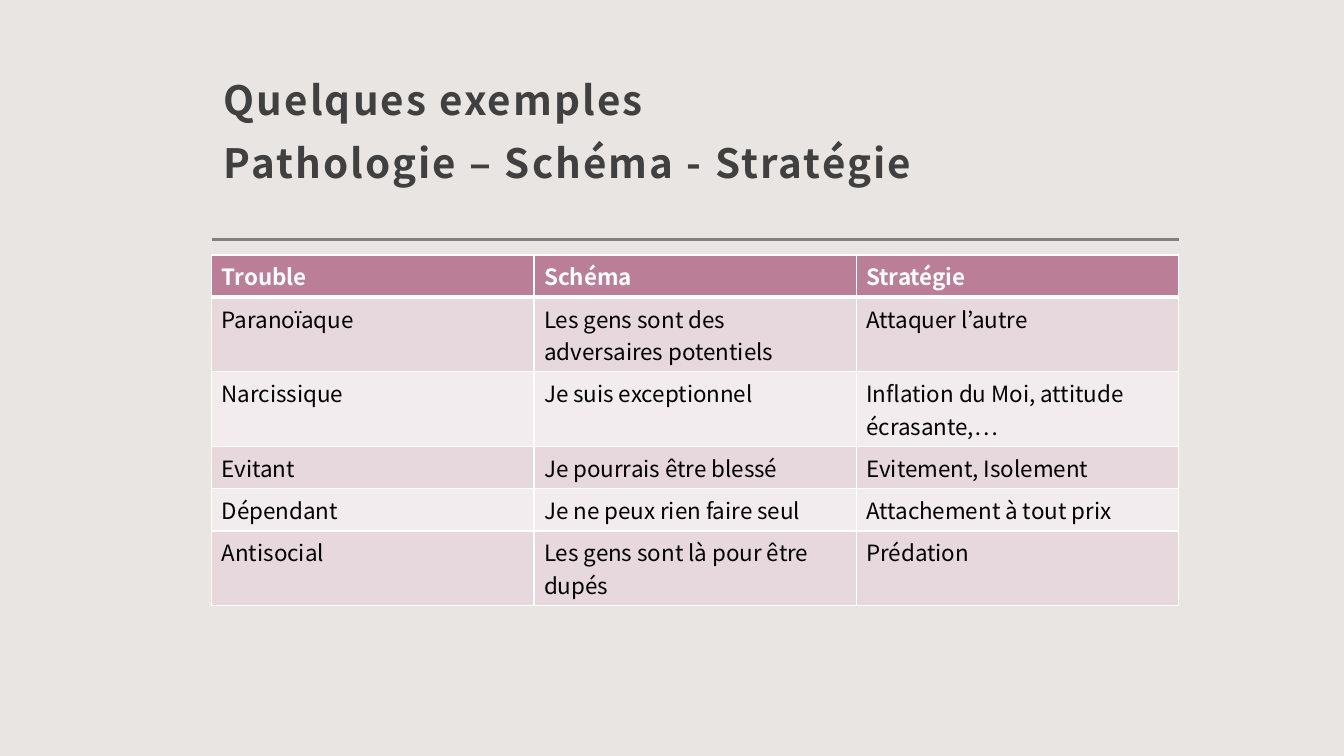
import pptx
import pptx.dml.color
import pptx.enum.shapes
import pptx.enum.text
import pptx.oxml
import pptx.oxml.ns
import pptx.util

WIDTH, HEIGHT = 13.33, 7.5
FONT = "Noto Sans CJK JP"
HEADER_FILL, BAND_FILLS = "BA7F96", ("E7D8DD", "F3ECEF")
ONE_LINE, TWO_LINES, LINE_CHARACTERS = 0.42, 0.74, 30
TITLE = "Quelques exemples\vPathologie – Schéma - Stratégie"
TROUBLES = [
    ("Trouble", "Schéma", "Stratégie"),
    ("Paranoïaque", "Les gens sont des adversaires potentiels", "Attaquer l’autre"),
    ("Narcissique", "Je suis exceptionnel", "Inflation du Moi, attitude écrasante,…"),
    ("Evitant", "Je pourrais être blessé", "Evitement, Isolement"),
    ("Dépendant", "Je ne peux rien faire seul", "Attachement à tout prix"),
    ("Antisocial", "Les gens sont là pour être dupés", "Prédation"),
]


def inches(*lengths):
    """Convert lengths in inches to slide units."""
    return [pptx.util.Inches(length) for length in lengths]


def colour(hex_value):
    """Return the colour for a hex string."""
    return pptx.dml.color.RGBColor.from_string(hex_value)


def paint(fill, hex_value):
    """Give a fill one solid colour."""
    fill.solid()
    fill.fore_color.rgb = colour(hex_value)


def write(frame, text, size, hex_value, bold):
    """Write text in a frame and format its runs."""
    frame.text = text
    formats = {"name": FONT, "size": pptx.util.Pt(size), "bold": bold}
    for run in frame.paragraphs[0].runs:
        for key, value in formats.items():
            setattr(run.font, key, value)
        run.font.color.rgb = colour(hex_value)


def add_title(slide, box):
    """Place the two-line title at the bottom of its box."""
    frame = slide.shapes.add_textbox(*inches(*box)).text_frame
    settings = {
        "word_wrap": True,
        "vertical_anchor": pptx.enum.text.MSO_ANCHOR.BOTTOM,
        "margin_left": pptx.util.Inches(0.12),
        "margin_top": pptx.util.Inches(0.12),
        "margin_right": pptx.util.Inches(0.12),
        "margin_bottom": pptx.util.Inches(0.1),
    }
    for key, value in settings.items():
        setattr(frame, key, value)
    write(frame, TITLE, 28.8, "404040", True)
    frame.paragraphs[0].line_spacing = 1.3
    for run in frame.paragraphs[0].runs:
        run.font._element.set("spc", "150")


def add_rule(slide, box):
    """Draw the grey rule along the top of its box."""
    left, top, width, _ = box
    rule = slide.shapes.add_connector(
        pptx.enum.shapes.MSO_CONNECTOR.STRAIGHT, *inches(left, top, left + width, top))
    rule.line.color.rgb = colour("808080")
    rule.line.width = pptx.util.Pt(2)
    rule._element.spPr.append(pptx.oxml.parse_xml(
        f'<a:effectLst {pptx.oxml.ns.nsdecls("a")}/>'))


def add_borders(cell, widths):
    """Draw white borders of the given widths in points by side."""
    properties = cell._tc.get_or_add_tcPr()
    for index, (side, width) in enumerate(widths.items()):
        properties.insert(index, pptx.oxml.parse_xml(
            f'<a:ln{side} {pptx.oxml.ns.nsdecls("a")} w="{pptx.util.Pt(width)}">'
            f'<a:solidFill><a:srgbClr val="FFFFFF"/></a:solidFill></a:ln{side}>'))


def row_height(texts):
    """Return the height a row needs for its longest text."""
    longest = max(len(text) for text in texts)
    return TWO_LINES if longest > LINE_CHARACTERS else ONE_LINE


def add_troubles(slide, box):
    """Fill the box with the table of troubles in equal columns."""
    table = slide.shapes.add_table(
        len(TROUBLES), len(TROUBLES[0]), *inches(*box)).table
    for row, texts in enumerate(TROUBLES):
        header = row == 0
        fill = HEADER_FILL if header else BAND_FILLS[(row - 1) % 2]
        table.rows[row].height = pptx.util.Inches(row_height(texts))
        for column, text in enumerate(texts):
            cell = table.cell(row, column)
            write(cell.text_frame, text, 16, "FFFFFF" if header else "000000", header)
            paint(cell.fill, fill)
            add_borders(cell, {"L": 1, "R": 1, "T": 3 if row == 1 else 1,
                               "B": 3 if header else 1})


def main():
    """Build and save the slide."""
    deck = pptx.Presentation()
    deck.slide_width, deck.slide_height = inches(WIDTH, HEIGHT)
    slide = deck.slides.add_slide(deck.slide_layouts[6])
    paint(slide.background.fill, "E8E5E2")
    left, width = 2.1, 9.59
    add_rule(slide, (left, 2.38, width, 0))
    add_title(slide, (left, 0.48, width, 1.47))
    add_troubles(slide, (left, 2.53, width, sum(map(row_height, TROUBLES))))
    deck.save("out.pptx")


if __name__ == "__main__":
    main()
